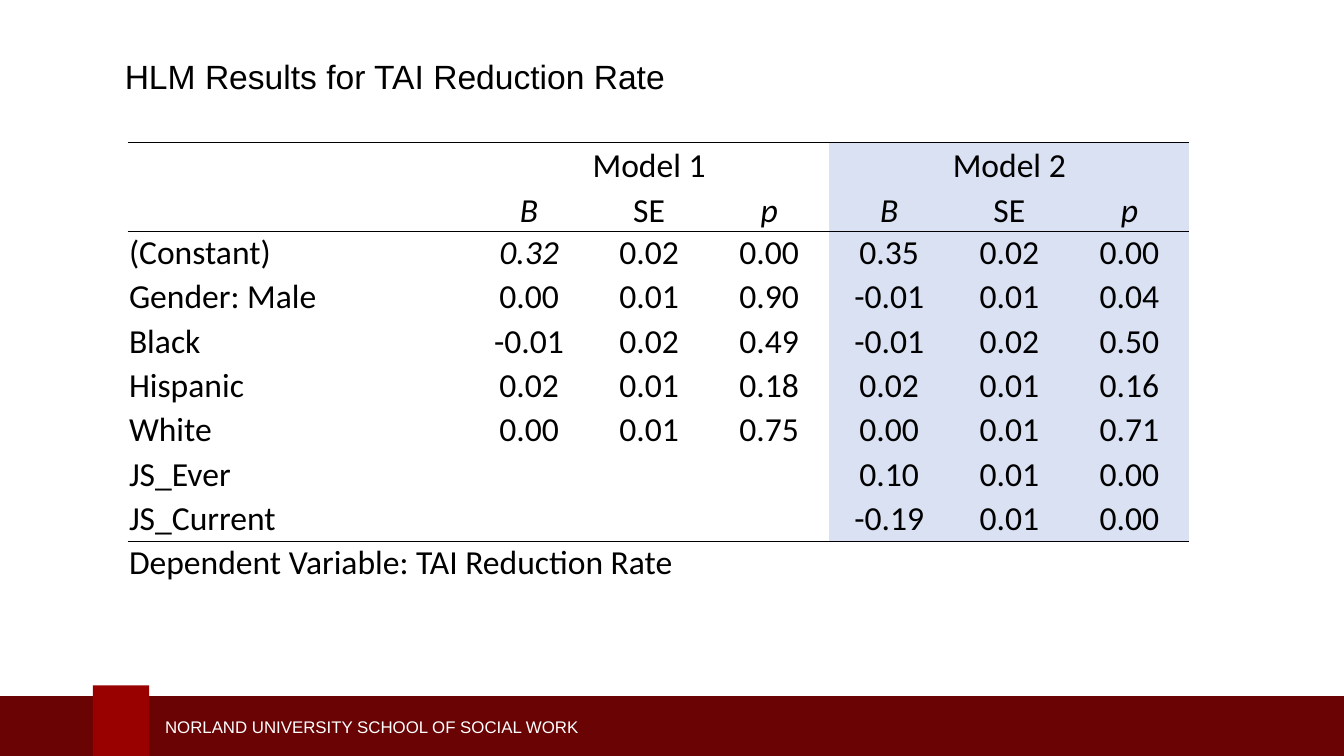
from lxml import etree
from pptx import Presentation
from pptx import util as u
from pptx.dml.color import RGBColor
from pptx.enum import shapes, text
from pptx.oxml import ns

NO_STYLE = "{2D5ABB26-0587-4C30-8999-92F81FD0307C}"
HEADER_ROWS = 2
MODEL_COLS = 3
TABLE_WIDTH, NAME_WIDTH = 7.9, 2.54
VALUE_WIDTH = (TABLE_WIDTH - NAME_WIDTH) / (2 * MODEL_COLS)
RULES = {0: "a:lnT", 1: "a:lnB", 2: "a:lnT", 8: "a:lnB", 9: "a:lnT"}
ITALIC = {(1, 1), (1, 3), (1, 4), (1, 6), (2, 1)}
ROWS = [
    ["", "Model 1", "", "", "Model 2", "", ""],
    ["", "B", "SE", "p", "B", "SE", "p"],
    ["(Constant)", "0.32", "0.02", "0.00", "0.35", "0.02", "0.00"],
    ["Gender: Male", "0.00", "0.01", "0.90", "-0.01", "0.01", "0.04"],
    ["Black", "-0.01", "0.02", "0.49", "-0.01", "0.02", "0.50"],
    ["Hispanic", "0.02", "0.01", "0.18", "0.02", "0.01", "0.16"],
    ["White", "0.00", "0.01", "0.75", "0.00", "0.01", "0.71"],
    ["JS_Ever", "", "", "", "0.10", "0.01", "0.00"],
    ["JS_Current", "", "", "", "-0.19", "0.01", "0.00"],
    ["Dependent Variable: TAI Reduction Rate"] + [""] * 6,
]


def rgb(value):
    return RGBColor.from_string(value)


class Deck:
    ink, white = "000000", "FFFFFF"
    dark_red, red, tint = "690304", "990000", "D9E1F2"
    heading_font, table_font = "Arial", "Calibri"

    def __init__(self, prs):
        self.s = prs.slides.add_slide(prs.slide_layouts[6])

    def font(self, p, name, size, color):
        p.font.name, p.font.size = name, u.Pt(size)
        p.font.color.rgb = rgb(color)

    def bar(self, x, y, w, h, color):
        sp = self.s.shapes.add_shape(shapes.MSO_SHAPE.RECTANGLE, *map(u.Inches, (x, y, w, h)))
        sp.shadow.inherit = False
        sp.fill.solid()
        sp.fill.fore_color.rgb = rgb(color)
        sp.line.fill.background()

    def label(self, x, y, w, h, words, size, color, anchor=text.MSO_ANCHOR.TOP):
        tf = self.s.shapes.add_textbox(*map(u.Inches, (x, y, w, h))).text_frame
        tf.word_wrap = True
        tf.auto_size = text.MSO_AUTO_SIZE.SHAPE_TO_FIT_TEXT
        tf.vertical_anchor = anchor
        p = tf.paragraphs[0]
        p.text = words
        self.font(p, self.heading_font, size, color)

    def borders(self, cell, ruled):
        """Draw a thin line on the ruled side and clear the other one."""
        tc_pr = cell._tc.get_or_add_tcPr()
        for tag in ("a:lnB", "a:lnT"):
            ln = etree.Element(ns.qn(tag), w=str(u.Pt(0.5)))
            if tag == ruled:
                fill = etree.SubElement(ln, ns.qn("a:solidFill"))
                etree.SubElement(fill, ns.qn("a:srgbClr"), val=self.ink)
            else:
                etree.SubElement(ln, ns.qn("a:noFill"))
            tc_pr.insert(0, ln)

    def cell(self, cell, words, row, col):
        cell.margin_left = cell.margin_right = cell.margin_top = u.Inches(0.01)
        cell.margin_bottom = 0
        header = row < HEADER_ROWS
        cell.vertical_anchor = text.MSO_ANCHOR.BOTTOM if header else text.MSO_ANCHOR.TOP
        p = cell.text_frame.paragraphs[0]
        p.text = words
        p.alignment = text.PP_ALIGN.CENTER if col else text.PP_ALIGN.LEFT
        self.font(p, self.table_font, 18, self.ink)
        p.font.italic = (row, col) in ITALIC
        if col > MODEL_COLS and row < len(ROWS) - 1:
            cell.fill.solid()
            cell.fill.fore_color.rgb = rgb(self.tint)
        else:
            cell.fill.background()
        self.borders(cell, RULES.get(row))

    def table(self, x, y, widths, heights, rows):
        size = map(u.Inches, (x, y, sum(widths), sum(heights)))
        table = self.s.shapes.add_table(len(rows), len(widths), *size).table
        table.first_row = table.horz_banding = False
        table._tbl.tblPr.find(ns.qn("a:tableStyleId")).text = NO_STYLE
        for column, width in zip(table.columns, widths):
            column.width = u.Inches(width)
        for i, (row, height) in enumerate(zip(rows, heights)):
            table.rows[i].height = u.Inches(height)
            for j, words in enumerate(row):
                self.cell(table.cell(i, j), words, i, j)
        for first in (1, 1 + MODEL_COLS):
            table.cell(0, first).merge(table.cell(0, first + MODEL_COLS - 1))
        last = len(rows) - 1
        table.cell(last, 0).merge(table.cell(last, len(widths) - 1))


def main():
    prs = Presentation()
    prs.slide_width = u.Inches(10)
    prs.slide_height = prs.slide_width * 9 // 16
    deck = Deck(prs)
    deck.bar(-0.03, 5.18, 10.09, 0.5, deck.dark_red)
    deck.bar(0.69, 5.1, 0.42, 0.58, deck.red)
    deck.label(1.13, 5.28, 3.95, 0.25, "NORLAND UNIVERSITY SCHOOL OF SOCIAL WORK",
               9, deck.white, text.MSO_ANCHOR.MIDDLE)
    deck.label(0.83, 0.37, 4.45, 0.4, "HLM Results for TAI Reduction Rate", 18, deck.ink)
    widths = [NAME_WIDTH] + [VALUE_WIDTH] * 2 * MODEL_COLS
    deck.table(0.95, 1.06, widths, [0.33] * 9 + [0.66], ROWS)
    prs.save("out.pptx")


if __name__ == "__main__":
    main()
